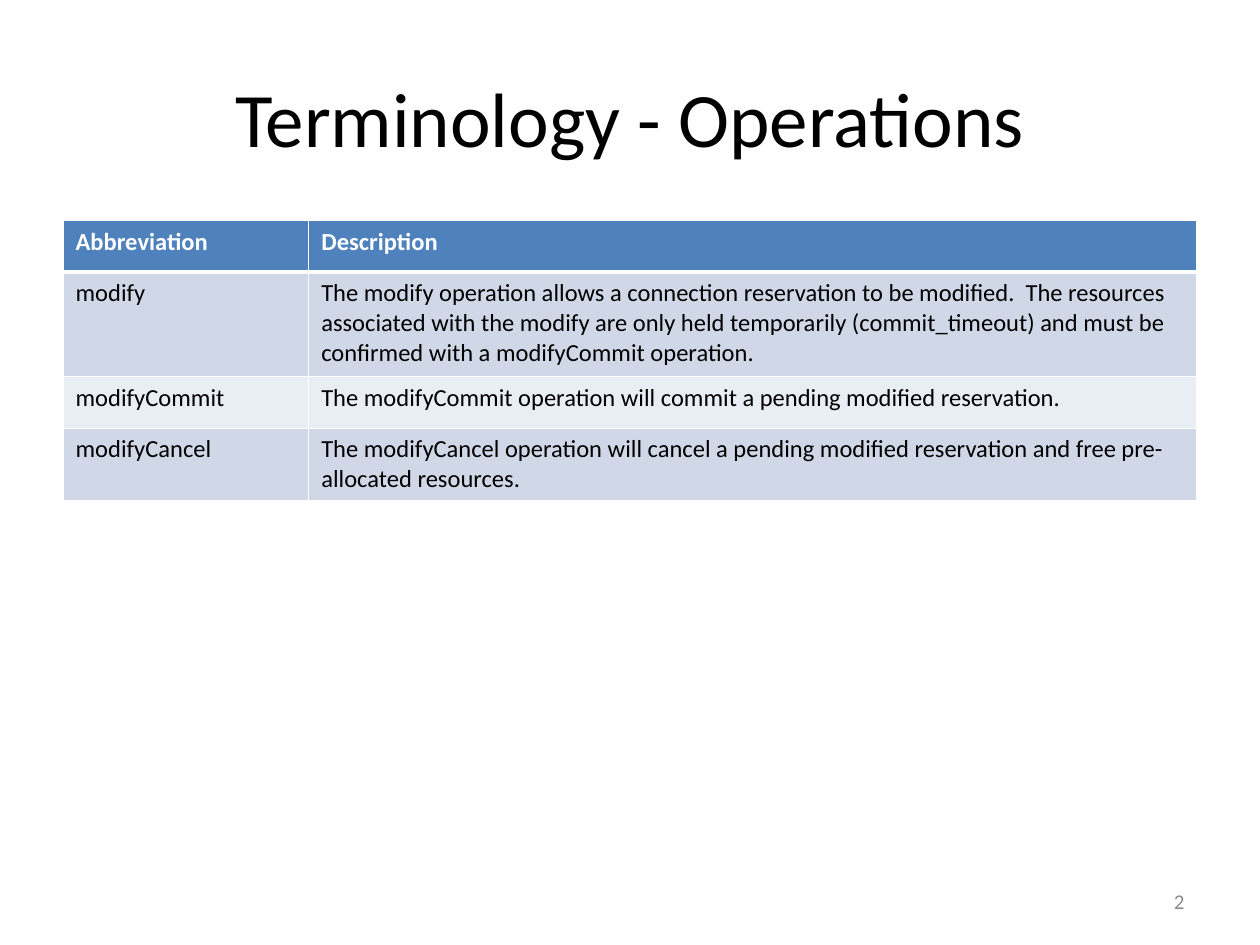
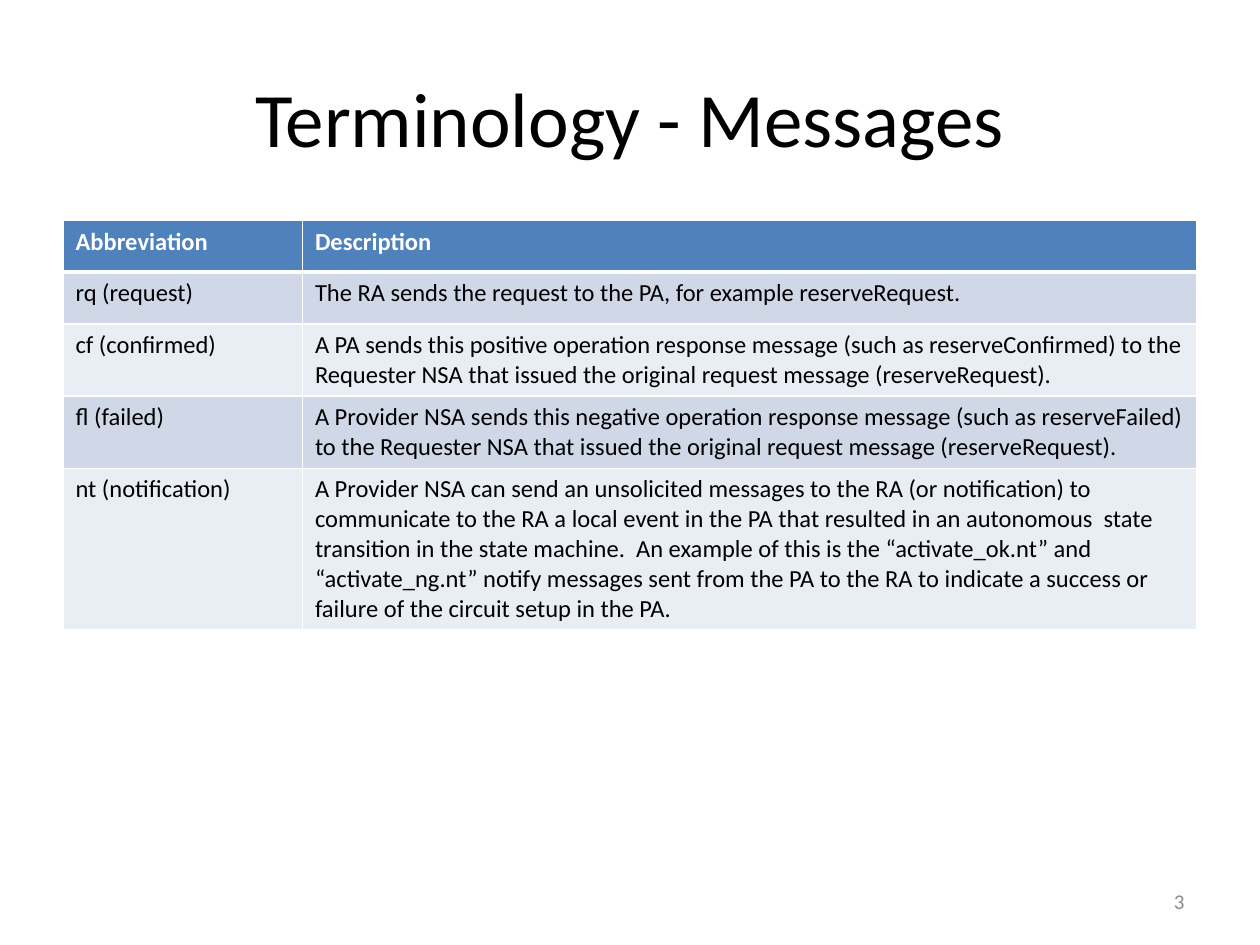
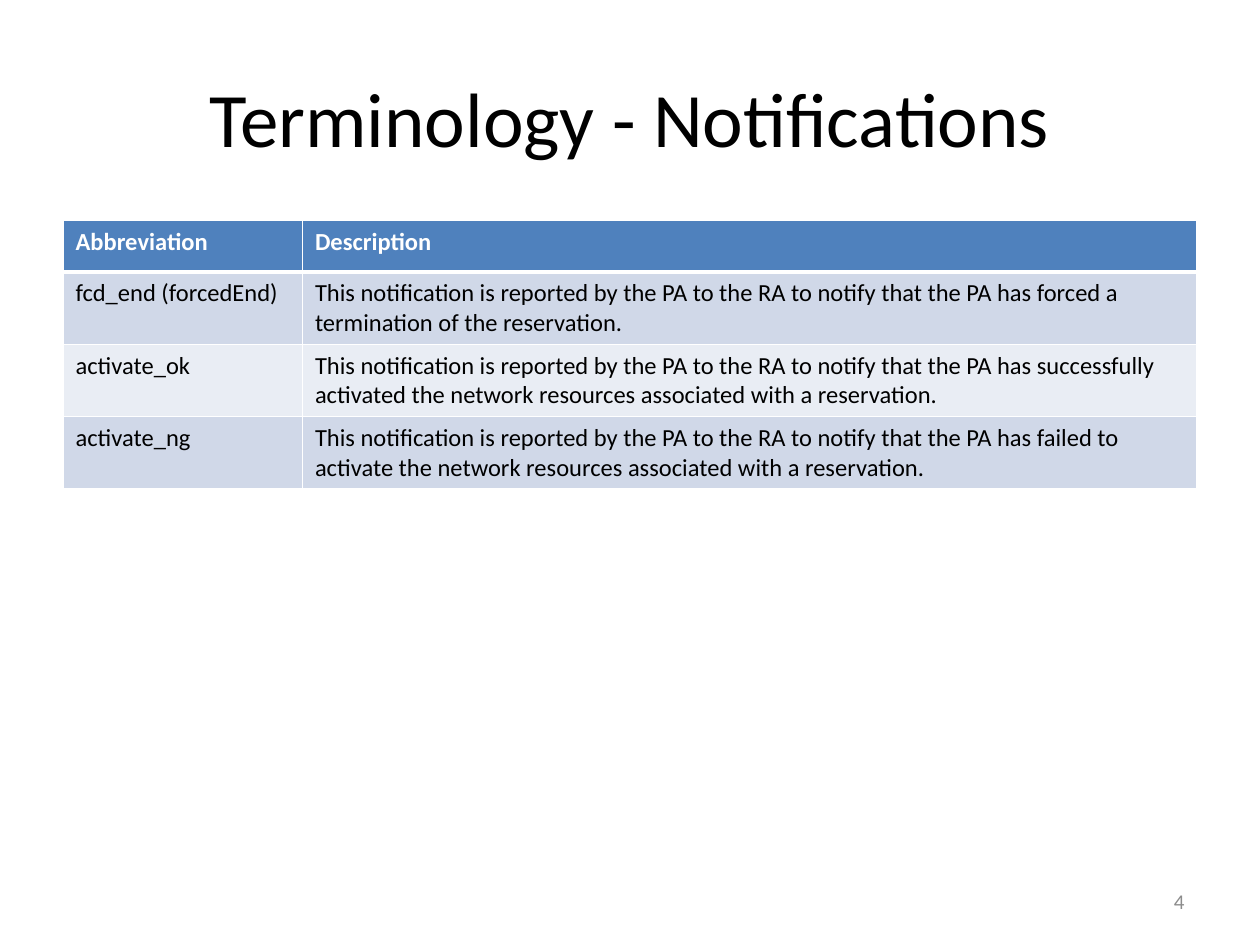
from dataclasses import dataclass
from typing import Any

from lxml.etree import SubElement
from pptx import Presentation
from pptx.dml.color import RGBColor
from pptx.enum.text import MSO_ANCHOR, PP_ALIGN
from pptx.oxml.ns import qn
from pptx.util import Inches, Pt

FONT = "Calibri"
BLACK, WHITE, GRAY = "000000", "FFFFFF", "8C8C8C"
HEADER_FILL = "4F81BD"
BAND_FILLS = ("D0D8E8", "E9EDF4")

TITLE_FORMAT = {"size": Pt(44), "bold": False}
HEADER_FORMAT = {"size": Pt(14), "bold": True}
BODY_FORMAT = {"size": Pt(14), "bold": False}
NUMBER_FORMAT = {"size": Pt(12), "bold": False}

MARGIN, CONTENT_WIDTH = 0.5, 9
TABLE_TOP, ROW_HEIGHT = 1.75, 0.41
THIN_LINE, HEADER_LINE = 1, 3
HEADINGS = ("Abbreviation", "Description")
FIRST_NUMBER = 2


@dataclass(frozen=True)
class Term:
    abbreviation: str
    description: str
    height: float = ROW_HEIGHT


@dataclass(frozen=True)
class TermSlide:
    title: str
    first_column: float
    terms: tuple[Term, ...]


SLIDES = (
    TermSlide("Terminology - Operations", 1.95, (
        Term("modify",
             "The modify operation allows a connection reservation to be modified.  "
             "The resources associated with the modify are only held temporarily "
             "(commit_timeout) and must be confirmed with a modifyCommit operation.", 0.83),
        Term("modifyCommit",
             "The modifyCommit operation will commit a pending modified reservation."),
        Term("modifyCancel",
             "The modifyCancel operation will cancel a pending modified reservation "
             "and free pre-allocated resources."),
    )),
    TermSlide("Terminology - Messages", 1.9, (
        Term("rq (request)",
             "The RA sends the request to the PA, for example reserveRequest."),
        Term("cf (confirmed)",
             "A PA sends this positive operation response message (such as "
             "reserveConfirmed) to the Requester NSA that issued the original request "
             "message (reserveRequest)."),
        Term("fl (failed)",
             "A Provider NSA sends this negative operation response message (such as "
             "reserveFailed) to the Requester NSA that issued the original request "
             "message (reserveRequest)."),
        Term("nt (notification)",
             "A Provider NSA can send an unsolicited messages to the RA (or "
             "notification) to communicate to the RA a local event in the PA that "
             "resulted in an autonomous  state transition in the state machine.  An "
             "example of this is the “activate_ok.nt” and “activate_ng.nt” notify "
             "messages sent from the PA to the RA to indicate a success or failure of "
             "the circuit setup in the PA."),
    )),
    TermSlide("Terminology - Notifications", 1.9, (
        Term("fcd_end (forcedEnd)",
             "This notification is reported by the PA to the RA to notify that the PA "
             "has forced a termination of the reservation."),
        Term("activate_ok",
             "This notification is reported by the PA to the RA to notify that the PA "
             "has successfully activated the network resources associated with a "
             "reservation."),
        Term("activate_ng",
             "This notification is reported by the PA to the RA to notify that the PA "
             "has failed to activate the network resources associated with a "
             "reservation."),
    )),
)


def paint(color_format: Any, color: str) -> None:
    color_format.rgb = RGBColor.from_string(color)


def write(frame: Any, text: str, color: str, format_values: dict[str, Any],
          align: PP_ALIGN = PP_ALIGN.LEFT) -> None:
    para = frame.paragraphs[0]
    para.alignment = align
    span = para.add_run()
    span.text = text
    span.font.name = FONT
    for name, value in format_values.items():
        setattr(span.font, name, value)
    paint(span.font.color, color)


def add_borders(cell: Any, top: int, bottom: int) -> None:
    properties = cell._tc.get_or_add_tcPr()
    widths = {"a:lnL": THIN_LINE, "a:lnR": THIN_LINE, "a:lnT": top, "a:lnB": bottom}
    for tag, width in widths.items():
        line = SubElement(properties, qn(tag), w=str(Pt(width)))
        SubElement(SubElement(line, qn("a:solidFill")), qn("a:srgbClr"), val=WHITE)


def fill_row(table: Any, index: int, texts: tuple[str, str]) -> None:
    is_header = index == 0
    fill = HEADER_FILL if is_header else BAND_FILLS[(index - 1) % 2]
    top = HEADER_LINE if index == 1 else THIN_LINE
    bottom = HEADER_LINE if is_header else THIN_LINE
    for cell, text in zip(table.rows[index].cells, texts):
        add_borders(cell, top, bottom)
        cell.fill.solid()
        paint(cell.fill.fore_color, fill)
        write(cell.text_frame, text, WHITE if is_header else BLACK,
              HEADER_FORMAT if is_header else BODY_FORMAT)


def add_term_table(page: Any, content: TermSlide) -> None:
    heights = [ROW_HEIGHT, *(term.height for term in content.terms)]
    table = page.shapes.add_table(
        len(heights), len(HEADINGS), Inches(MARGIN), Inches(TABLE_TOP),
        Inches(CONTENT_WIDTH), Inches(sum(heights))).table
    widths = (content.first_column, CONTENT_WIDTH - content.first_column)
    for column, width in zip(table.columns, widths):
        column.width = Inches(width)
    for row, height in zip(table.rows, heights):
        row.height = Inches(height)
    fill_row(table, 0, HEADINGS)
    for index, term in enumerate(content.terms, 1):
        fill_row(table, index, (term.abbreviation, term.description))


def place_title(page: Any, text: str) -> None:
    title = page.shapes.title
    title.left, title.top = Inches(MARGIN), Inches(0.3)
    title.width, title.height = Inches(CONTENT_WIDTH), Inches(1.25)
    title.text_frame.vertical_anchor = MSO_ANCHOR.MIDDLE
    write(title.text_frame, text, BLACK, TITLE_FORMAT, PP_ALIGN.CENTER)


def add_page_number(page: Any, number: int) -> None:
    box = page.shapes.add_textbox(Inches(7.17), Inches(6.95), Inches(2.33), Inches(0.4))
    box.text_frame.word_wrap = True
    box.text_frame.vertical_anchor = MSO_ANCHOR.MIDDLE
    write(box.text_frame, str(number), GRAY, NUMBER_FORMAT, PP_ALIGN.RIGHT)


def main() -> None:
    deck = Presentation()
    deck.slide_width, deck.slide_height = Inches(10), Inches(7.5)
    title_only = deck.slide_layouts.get_by_name("Title Only")
    for number, content in enumerate(SLIDES, FIRST_NUMBER):
        page = deck.slides.add_slide(title_only)
        place_title(page, content.title)
        add_term_table(page, content)
        add_page_number(page, number)
    deck.save("out.pptx")


if __name__ == "__main__":
    main()
